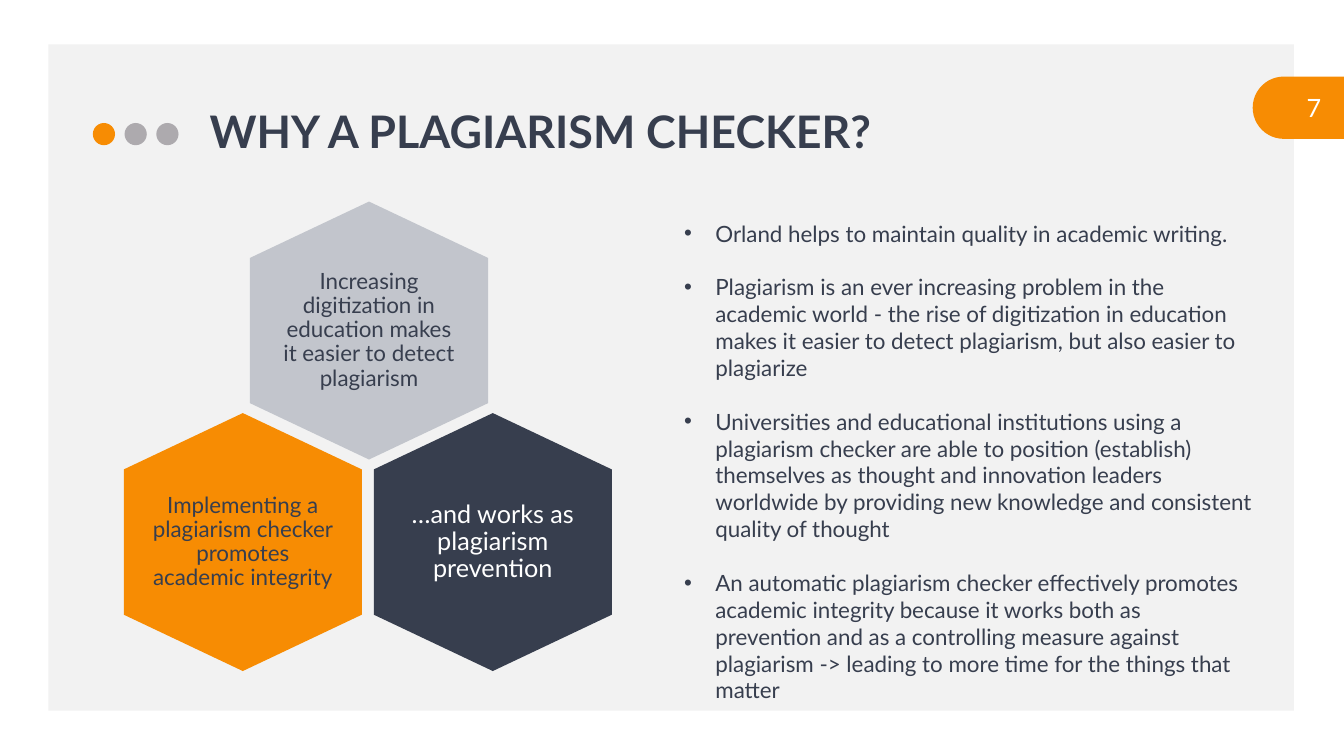
from lxml.etree import SubElement
from pptx import Presentation
from pptx.enum.shapes import MSO_SHAPE
from pptx.enum.text import MSO_ANCHOR, MSO_AUTO_SIZE, PP_ALIGN
from pptx.dml.color import RGBColor
from pptx.oxml.ns import qn
from pptx.util import Cm, Pt

ORANGE, NAVY, WHITE = "F78C03", "373E4E", "FFFFFF"
SILVER, GREY, PANEL = "C2C5CC", "ADAAAE", "F2F2F2"


def paint(item, color):
    """Fill a shape or a font with a hex colour; shapes lose line and shadow."""
    item.fill.solid()
    item.fill.fore_color.rgb = RGBColor.from_string(color)
    if hasattr(item, "shadow"):
        item.line.fill.background()
        item.shadow.inherit = False


def write(shape, *texts, size=16, color=NAVY, bold=False, align=PP_ALIGN.LEFT,
          anchor=MSO_ANCHOR.MIDDLE, inset=(0.25, 0.13), line_spacing=1.0,
          gap=0, bullet=None):
    frame = shape.text_frame
    frame.word_wrap = True
    frame.auto_size = MSO_AUTO_SIZE.NONE
    frame.vertical_anchor = anchor
    frame.margin_left = frame.margin_right = Cm(inset[0])
    frame.margin_top = frame.margin_bottom = Cm(inset[1])
    for index, text in enumerate(texts):
        paragraph = frame.add_paragraph() if index else frame.paragraphs[0]
        paragraph.alignment = align
        paragraph.line_spacing = line_spacing
        paragraph.space_before = Pt(gap if index else 0)
        run = paragraph.add_run()
        run.text = text
        run.font.name = "Lato"
        run.font.size = Pt(size)
        run.font.bold = bold
        paint(run.font, color)
        if bullet:
            properties = paragraph._p.get_or_add_pPr()
            properties.set("marL", str(Cm(0.79)))
            properties.set("indent", str(-Cm(0.79)))
            SubElement(properties, qn("a:buFont")).set("typeface", "Arial")
            SubElement(properties, qn("a:buChar")).set("char", bullet)


presentation = Presentation()
presentation.slide_width = Cm(33.87)
presentation.slide_height = Cm(19.05)
slide = presentation.slides.add_slide(presentation.slide_layouts[5])
shapes = slide.shapes

# Background panel
panel = shapes.add_shape(MSO_SHAPE.RECTANGLE, Cm(1.22), Cm(1.12), Cm(31.39), Cm(16.79))
paint(panel, PANEL)

# Page number tab
tab = shapes.add_shape(MSO_SHAPE.ROUNDED_RECTANGLE, Cm(31.57), Cm(1.93), Cm(3.25), Cm(1.57))
tab.adjustments[0] = 0.5
paint(tab, ORANGE)
page_number = shapes.add_textbox(Cm(25.93), Cm(2.21), Cm(7.62), Cm(1.02))
write(page_number, "7", size=18, color=WHITE, align=PP_ALIGN.RIGHT)

# Three dots before the title
for index, color in enumerate([ORANGE, GREY, GREY]):
    dot = shapes.add_shape(MSO_SHAPE.OVAL, Cm(2.34 + 0.8 * index), Cm(3.1), Cm(0.56), Cm(0.56))
    paint(dot, color)

# Title, brought in front of the panel
title = shapes.title
title.left, title.top, title.width, title.height = Cm(5.03), Cm(2.13), Cm(26.49), Cm(2.49)
write(title, "WHY A PLAGIARISM CHECKER?", size=32, bold=True, line_spacing=0.9)
panel._element.addnext(title._element)

# Hexagons: left, top, fill, text, text size, text colour
WIDTH, HEIGHT, SHOULDER = 6, 6.5, 1.42
hexagons = [
    (6.3, 5.08, SILVER, "Increasing digitization in education makes it easier to detect plagiarism",
     16, NAVY),
    (3.12, 10.41, ORANGE, "Implementing a plagiarism checker promotes academic integrity",
     16, NAVY),
    (9.42, 10.41, NAVY, "…and works as plagiarism prevention", 18, WHITE),
]
for left, top, fill, text, size, color in hexagons:
    middle, right, bottom = left + WIDTH / 2, left + WIDTH, top + HEIGHT
    upper, lower = top + SHOULDER, bottom - SHOULDER
    corners = [(right, upper), (right, lower), (middle, bottom), (left, lower), (left, upper)]
    builder = shapes.build_freeform(Cm(middle), Cm(top))
    builder.add_line_segments([(Cm(x), Cm(y)) for x, y in corners], close=True)
    hexagon = builder.convert_to_shape()
    paint(hexagon, fill)
    write(hexagon, text, size=size, color=color, align=PP_ALIGN.CENTER,
          inset=(0.69, 0.79), line_spacing=0.9)

# Bulleted reasons
reasons = shapes.add_textbox(Cm(16.99), Cm(5.41), Cm(14.83), Cm(10.52))
write(
    reasons,
    "Orland helps to maintain quality in academic writing.",
    "Plagiarism is an ever increasing problem in the academic world - the rise of "
    "digitization in education makes it easier to detect plagiarism, but also easier "
    "to plagiarize",
    "Universities and educational institutions using a plagiarism checker are able to "
    "position (establish) themselves as thought and innovation leaders worldwide by "
    "providing new knowledge and consistent quality of thought",
    "An automatic plagiarism checker effectively promotes academic integrity because it "
    "works both as prevention and as a controlling measure against plagiarism -> leading "
    "to more time for the things that matter",
    anchor=MSO_ANCHOR.TOP, gap=19.2, bullet="•",
)

presentation.save("out.pptx")
